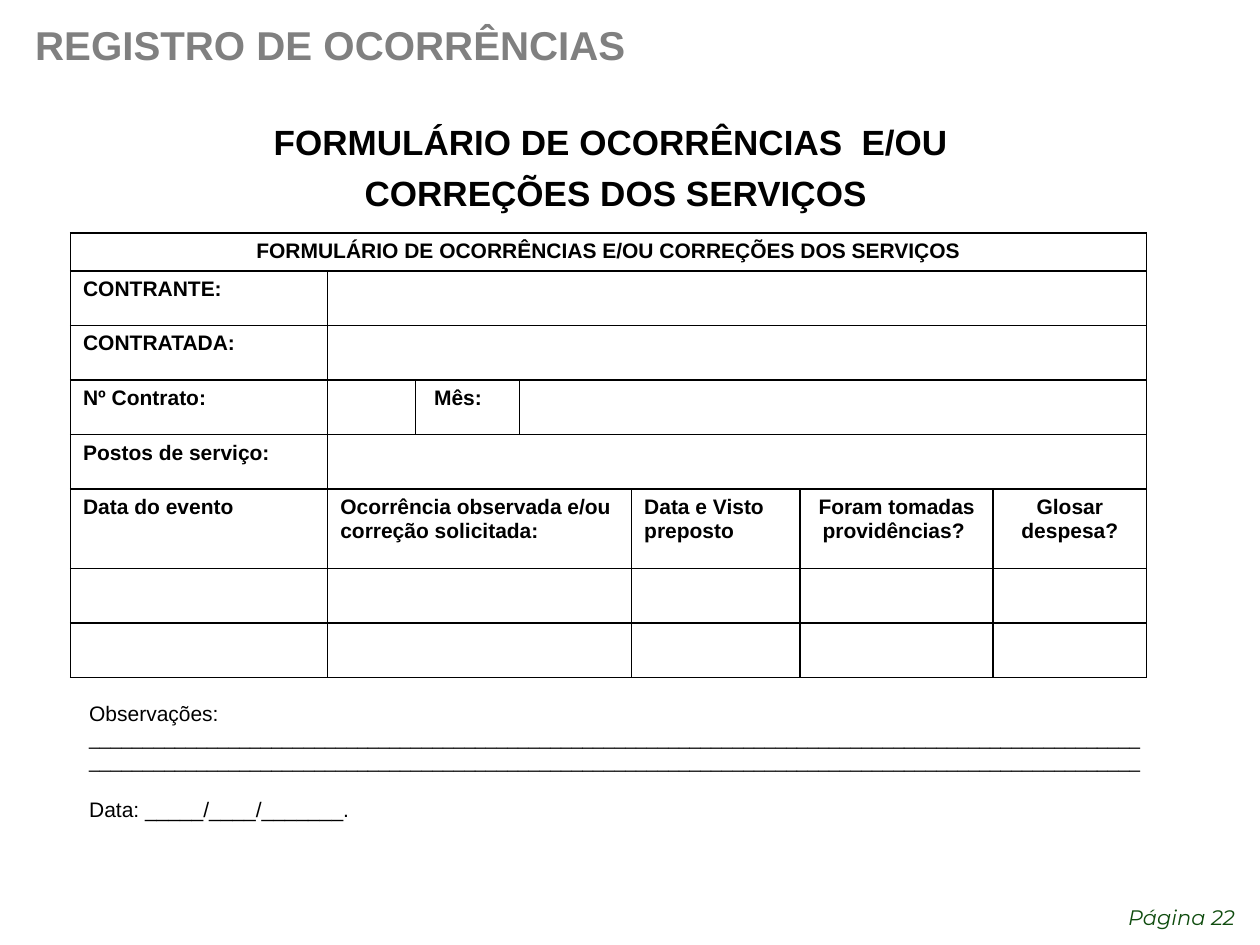
from dataclasses import dataclass

import lxml.etree
import pptx
import pptx.dml.color
import pptx.enum.text
import pptx.oxml.ns
import pptx.util

Pt = pptx.util.Pt
Align = pptx.enum.text.PP_ALIGN
Anchor = pptx.enum.text.MSO_ANCHOR


@dataclass(frozen=True)
class Theme:
    font: str = "Arial"
    accent: str = "Montserrat"
    ink: str = "000000"
    gray: str = "808080"
    green: str = "0F4C0E"
    title: float = 23
    head: float = 20
    body: float = 12
    rule: float = 11
    border: float = 1
    edge: float = 0.75


@dataclass(frozen=True)
class Box:
    left: float
    top: float
    width: float
    height: float


@dataclass(frozen=True)
class Style:
    size: float
    color: str
    font: str
    bold: bool = False
    italic: bool = False
    align: Align = Align.LEFT
    gap: float = 0


@dataclass(frozen=True)
class Cell:
    row: int
    col: int
    span: int = 1
    text: str = ""
    align: Align = Align.LEFT
    inset: float = 7.2


THEME = Theme()
TITLE = Style(THEME.title, THEME.gray, THEME.font, bold=True)
HEAD = Style(THEME.head, THEME.ink, THEME.font, bold=True, align=Align.CENTER, gap=5)
LABEL = Style(THEME.body, THEME.ink, THEME.font, bold=True)
NOTE = Style(THEME.body, THEME.ink, THEME.font, gap=14)
PAGE = Style(THEME.body, THEME.green, THEME.accent, italic=True, align=Align.RIGHT)

COLS = [147, 50.3, 59.4, 64, 96.3, 110.3, 87.7]
ROWS = [21.5, 31.2, 31.2, 31.2, 31.2, 45.2, 31.2, 31.2]
CELLS = [
    Cell(0, 0, 7, "FORMULÁRIO DE OCORRÊNCIAS E/OU CORREÇÕES DOS SERVIÇOS", Align.CENTER),
    Cell(1, 0, text="CONTRANTE:"),
    Cell(1, 1, 6),
    Cell(2, 0, text="CONTRATADA:"),
    Cell(2, 1, 6),
    Cell(3, 0, text="Nº Contrato:"),
    Cell(3, 2, text="Mês:", inset=10.5),
    Cell(3, 3, 4),
    Cell(4, 0, text="Postos de serviço:"),
    Cell(4, 1, 6),
    Cell(5, 0, text="Data do evento"),
    Cell(5, 1, 3, "Ocorrência observada e/ou correção solicitada:"),
    Cell(5, 4, text="Data e Visto preposto"),
    Cell(5, 5, text="Foram tomadas providências? ", align=Align.CENTER),
    Cell(5, 6, text="Glosar despesa?", align=Align.CENTER),
    Cell(6, 1, 3),
    Cell(7, 1, 3),
]


def paint(font: pptx.text.text.Font, style: Style) -> None:
    font.name = style.font
    font.size = Pt(style.size)
    font.bold = style.bold
    font.italic = style.italic
    font.color.rgb = pptx.dml.color.RGBColor.from_string(style.color)


def write(slide: pptx.slide.Slide, box: Box, lines: list[str], style: Style,
          anchor: Anchor = Anchor.TOP) -> pptx.text.text.TextFrame:
    """Add a text box with one paragraph for each line."""
    shape = slide.shapes.add_textbox(
        Pt(box.left), Pt(box.top), Pt(box.width), Pt(box.height))
    frame = shape.text_frame
    frame.word_wrap = True
    frame.vertical_anchor = anchor
    for index, line in enumerate(lines):
        para = frame.paragraphs[0]
        if index:
            para = frame.add_paragraph()
            para.space_before = Pt(style.gap)
        para.text = line
        para.alignment = style.align
        paint(para.font, style)
    return frame


def outline(cell: pptx.table._Cell, last: bool) -> None:
    """Draw the four cell borders, thinner at the foot of the last row."""
    props = cell._tc.get_or_add_tcPr()
    for index, side in enumerate("LRTB"):
        width = THEME.edge if last and side == "B" else THEME.border
        line = lxml.etree.Element(pptx.oxml.ns.qn(f"a:ln{side}"), w=str(Pt(width)))
        fill = lxml.etree.SubElement(line, pptx.oxml.ns.qn("a:solidFill"))
        lxml.etree.SubElement(fill, pptx.oxml.ns.qn("a:srgbClr"), val=THEME.ink)
        props.insert(index, line)


def draw_form(slide: pptx.slide.Slide, left: float, top: float) -> None:
    shape = slide.shapes.add_table(
        len(ROWS), len(COLS), Pt(left), Pt(top), Pt(sum(COLS)), Pt(sum(ROWS)))
    table = shape.table
    table.first_row = table.horz_banding = False
    for col, width in zip(table.columns, COLS):
        col.width = Pt(width)
    for index, (row, height) in enumerate(zip(table.rows, ROWS)):
        row.height = Pt(height)
        for cell in row.cells:
            cell.margin_top = cell.margin_bottom = Pt(3.6)
            cell.fill.background()
            outline(cell, index == len(ROWS) - 1)
            paint(cell.text_frame.paragraphs[0].font, LABEL)
    for item in CELLS:
        cell = table.cell(item.row, item.col)
        if item.span > 1:
            cell.merge(table.cell(item.row, item.col + item.span - 1))
        if item.text:
            cell.margin_left = Pt(item.inset)
            para = cell.text_frame.paragraphs[0]
            para.text = item.text
            para.alignment = item.align
            paint(para.font, LABEL)


def main() -> None:
    deck = pptx.Presentation()
    deck.slide_width, deck.slide_height = Pt(720), Pt(540)
    slide = deck.slides.add_slide(deck.slide_layouts[6])

    page = write(slide, Box(599.8, 510.5, 113, 23), ["Página 22"], PAGE)
    page.paragraphs[0].line_spacing = 1.2
    write(slide, Box(13, 1.5, 582, 48), ["REGISTRO DE OCORRÊNCIAS"], TITLE, Anchor.MIDDLE)
    write(slide, Box(35.3, 65.5, 633, 44),
          ["FORMULÁRIO DE OCORRÊNCIAS  E/OU ", "CORREÇÕES DOS SERVIÇOS"], HEAD)
    draw_form(slide, 40.3, 133.2)

    notes = write(slide, Box(43.9, 396.7, 616.3, 77),
                  ["Observações:", "Data: _____/____/_______."], NOTE, Anchor.MIDDLE)
    rule = notes.paragraphs[0].add_run()
    rule.text = " " + "_" * 196
    rule.font.size = Pt(THEME.rule)
    deck.save("out.pptx")


if __name__ == "__main__":
    main()
